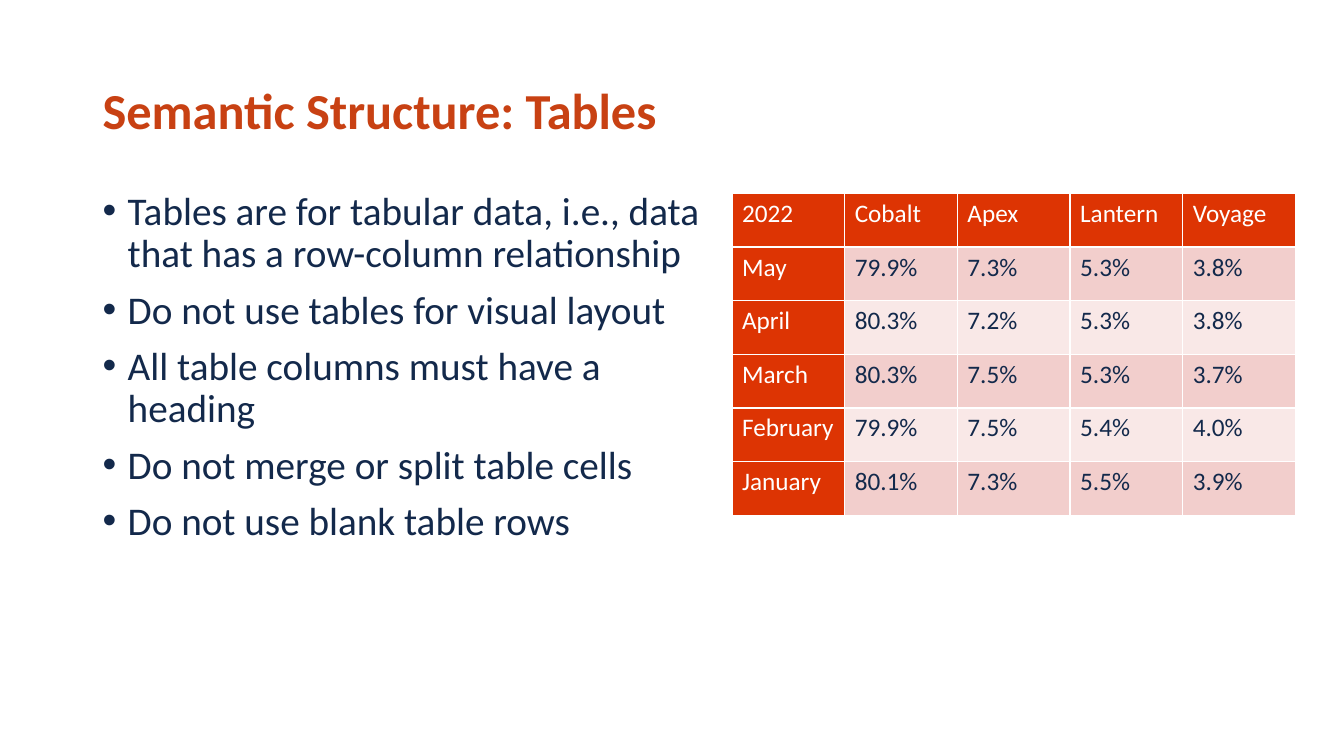
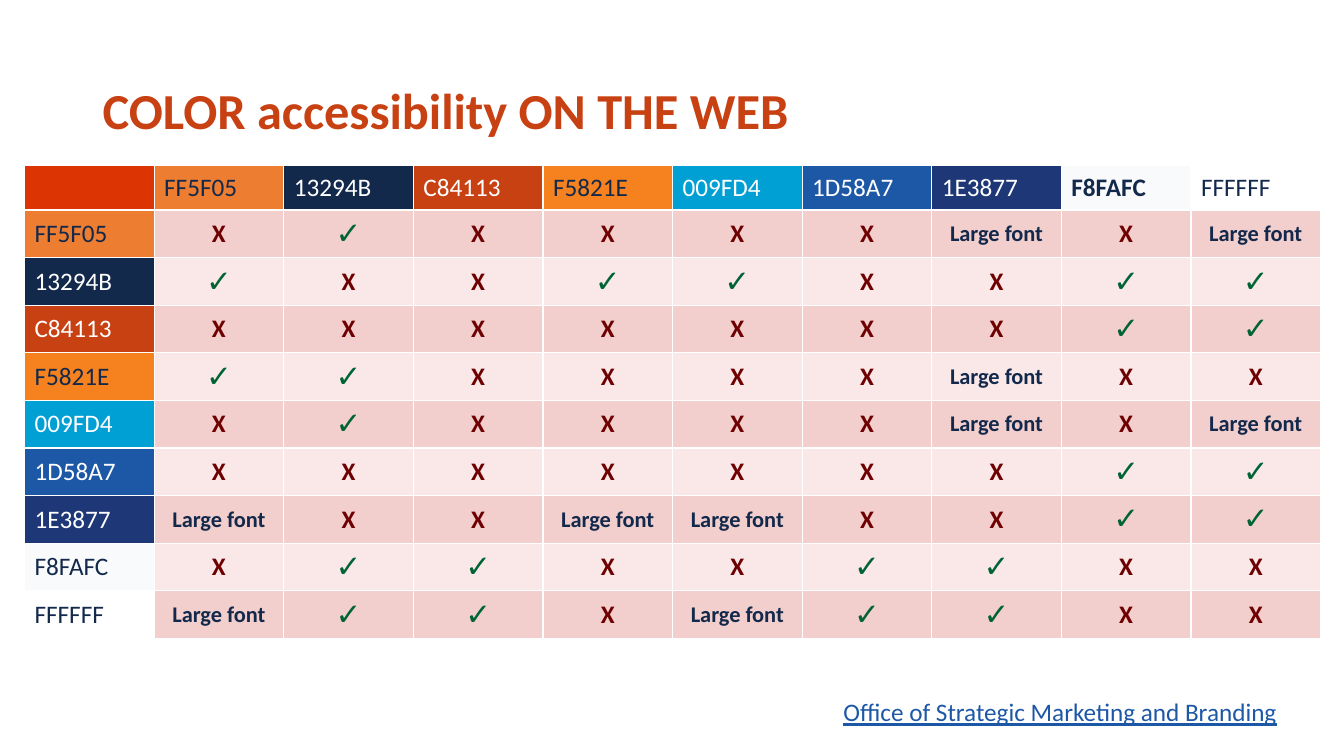
from lxml.etree import SubElement
from pptx import Presentation
from pptx.dml.color import RGBColor
from pptx.enum.text import MSO_ANCHOR as Anchor, PP_ALIGN as Align
from pptx.oxml.ns import qn
from pptx.util import Pt

FONT = "Calibri"
COLORS = {
    "title": "C84113",
    "navy": "13294B",
    "white": "FFFFFF",
    "header": "DD3403",
    "band_dark": "F2CECC",
    "band_light": "F9E8E7",
    "fail": "6E0001",
    "pass": "006335",
    "link": "1D58A7",
}

TABLE_RULES = [
    "Tables are for tabular data, i.e., data that has a row-column relationship",
    "Do not use tables for visual layout",
    "All table columns must have a heading",
    "Do not merge or split table cells",
    "Do not use blank table rows",
]

BROWSER_SHARES = [
    ["2022", "Cobalt", "Apex", "Lantern", "Voyage"],
    ["May", "79.9%", "7.3%", "5.3%", "3.8%"],
    ["April", "80.3%", "7.2%", "5.3%", "3.8%"],
    ["March", "80.3%", "7.5%", "5.3%", "3.7%"],
    ["February", "79.9%", "7.5%", "5.4%", "4.0%"],
    ["January", "80.1%", "7.3%", "5.5%", "3.9%"],
]

# One letter per colour pair: X fails, ✓ passes, L passes in large font
CONTRAST = {
    "FF5F05": "X✓XXXXLXL",
    "13294B": "✓XX✓✓XX✓✓",
    "C84113": "XXXXXXX✓✓",
    "F5821E": "✓✓XXXXLXX",
    "009FD4": "X✓XXXXLXL",
    "1D58A7": "XXXXXXX✓✓",
    "1E3877": "LXXLLXX✓✓",
    "F8FAFC": "X✓✓XX✓✓XX",
    "FFFFFF": "L✓✓XL✓✓XX",
}
VERDICTS = {  # text, size, colour
    "X": ("X", 18, COLORS["fail"]),
    "✓": ("✓", 22, COLORS["pass"]),
    "L": ("Large font", 16, COLORS["navy"]),
}
SWATCH_FILLS = {"FF5F05": "ED7D31"}
NAVY_LABELS = {"FF5F05", "F5821E", "F8FAFC", "FFFFFF"}


def style(paragraph, size, color, bold=False):
    font = paragraph.font
    font.name, font.size, font.bold = FONT, Pt(size), bold
    font.color.rgb = RGBColor.from_string(color)


def add_text(slide, left, top, width, height, lines):
    frame = slide.shapes.add_textbox(Pt(left), Pt(top), Pt(width), Pt(height)).text_frame
    frame.word_wrap = True
    frame.text = "\n".join(lines)
    return frame


def add_title(slide, text):
    frame = add_text(slide, 66.2, 28.8, 828, 104.4, [text])
    frame.vertical_anchor = Anchor.MIDDLE
    title = frame.paragraphs[0]
    title.line_spacing = 0.9
    style(title, 36, COLORS["title"], bold=True)


def add_bullets(slide, left, top, width, height, lines):
    frame = add_text(slide, left, top, width, height, lines)
    for index, item in enumerate(frame.paragraphs):
        props = item._p.get_or_add_pPr()
        props.set("marL", str(Pt(18)))
        props.set("indent", str(Pt(-18)))
        SubElement(props, qn("a:buFont"), typeface="Arial")
        SubElement(props, qn("a:buChar"), char="•")
        item.line_spacing = 0.9
        if index:
            item.space_before = Pt(10)
        style(item, 28, COLORS["navy"])


def add_grid(slide, left, top, col_width, row_heights, col_count):
    """Add a table with equal columns and thin white borders."""
    frame = slide.shapes.add_table(
        len(row_heights), col_count, Pt(left), Pt(top),
        Pt(col_width * col_count), Pt(sum(row_heights)))
    table = frame.table
    table.first_col = True
    for column in table.columns:
        column.width = Pt(col_width)
    for row, height in zip(table.rows, row_heights):
        row.height = Pt(height)
    for cell in table.iter_cells():
        for side in ("a:lnL", "a:lnR", "a:lnT", "a:lnB"):
            line = SubElement(cell._tc.get_or_add_tcPr(), qn(side), w=str(Pt(1)))
            fill = SubElement(line, qn("a:solidFill"))
            SubElement(fill, qn("a:srgbClr"), val=COLORS["white"])
    return table


def fill_cell(cell, fill, text, size, color, bold=False, align=Align.LEFT, anchor=Anchor.MIDDLE):
    cell.fill.solid()
    cell.fill.fore_color.rgb = RGBColor.from_string(fill)
    cell.vertical_anchor = anchor
    cell.text = text
    paragraph = cell.text_frame.paragraphs[0]
    paragraph.alignment = align
    style(paragraph, size, color, bold)


def band(row):
    return COLORS["band_dark" if row % 2 else "band_light"]


def add_share_table(slide):
    table = add_grid(slide, 522.9, 138.2, 80.5, [38.3] * len(BROWSER_SHARES),
                     len(BROWSER_SHARES[0]))
    for r, values in enumerate(BROWSER_SHARES):
        for c, value in enumerate(values):
            is_heading = r == 0 or c == 0
            fill_cell(table.cell(r, c), COLORS["header"] if is_heading else band(r), value, 18,
                      COLORS["white" if is_heading else "navy"], anchor=Anchor.TOP)


def add_contrast_table(slide):
    count = len(CONTRAST) + 1
    table = add_grid(slide, 17.5, 118.1, 92.6, [32] + [34] * len(CONTRAST), count)
    fill_cell(table.cell(0, 0), COLORS["header"], "", 18, COLORS["white"])
    for r, (code, verdicts) in enumerate(CONTRAST.items(), start=1):
        # Swatches: the same code heads a column and a row
        swatch = SWATCH_FILLS.get(code, code)
        label = COLORS["navy" if code in NAVY_LABELS else "white"]
        fill_cell(table.cell(0, r), swatch, code, 18, label, bold=code == "F8FAFC")
        fill_cell(table.cell(r, 0), swatch, code, 18, label)
        for c, verdict in enumerate(verdicts, start=1):
            fill_cell(table.cell(r, c), band(r), *VERDICTS[verdict], bold=True,
                      align=Align.CENTER)


def add_source(slide, text):
    source = add_text(slide, 595.4, 493.9, 326, 29, [text]).paragraphs[0]
    style(source, 18, COLORS["link"])
    source.font.underline = True


def main():
    deck = Presentation()
    deck.slide_width, deck.slide_height = Pt(960), Pt(540)
    blank = deck.slide_layouts[6]

    # Tables
    tables = deck.slides.add_slide(blank)
    add_title(tables, "Semantic Structure: Tables")
    add_bullets(tables, 66.2, 133.2, 457, 312, TABLE_RULES)
    add_share_table(tables)

    # Colour contrast
    contrast = deck.slides.add_slide(blank)
    add_title(contrast, "COLOR accessibility ON THE WEB")
    add_contrast_table(contrast)
    add_source(contrast, "Office of Strategic Marketing and Branding")

    deck.save("out.pptx")


if __name__ == "__main__":
    main()
